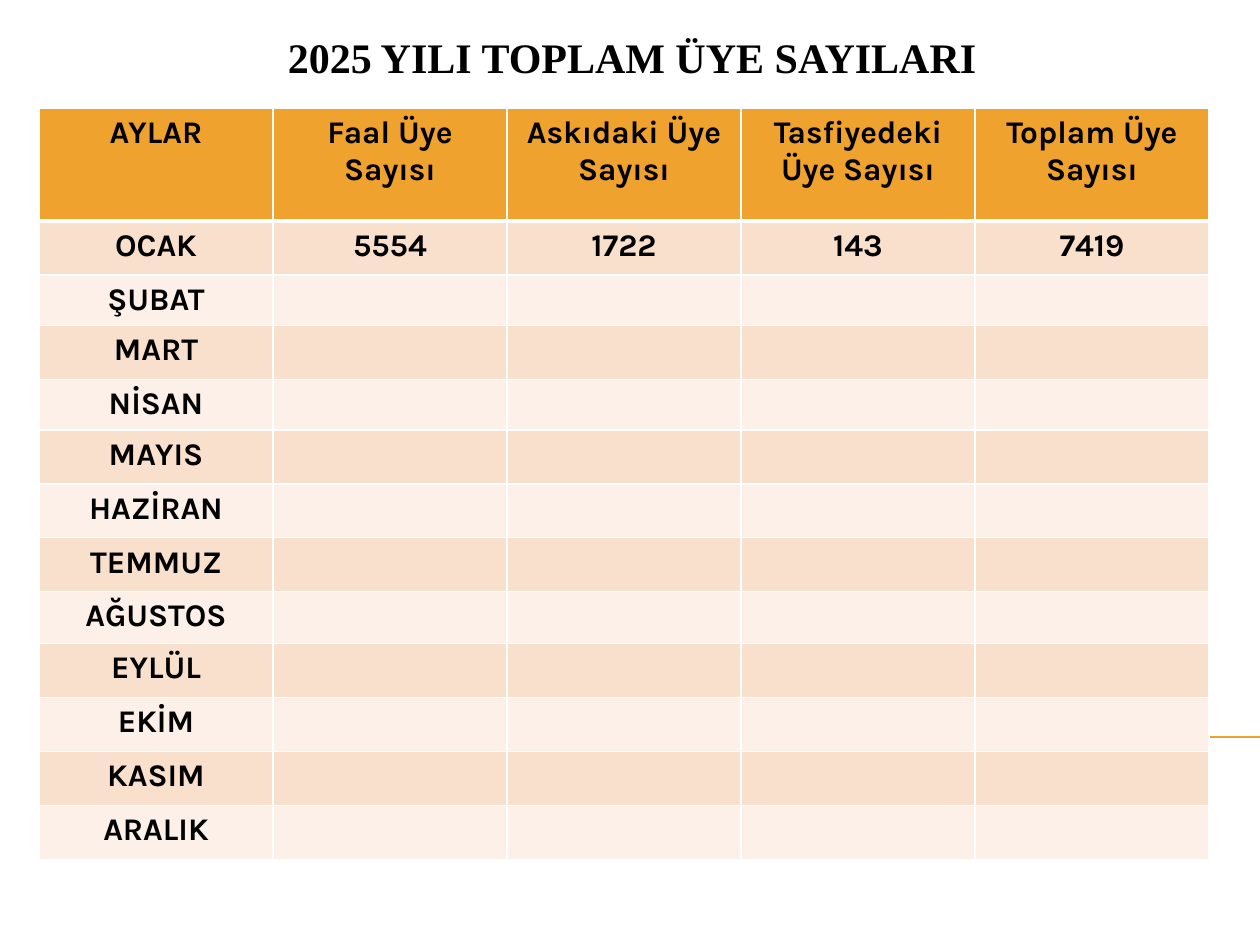
import pptx
import pptx.util
import pptx.dml.color
import pptx.enum.shapes
import pptx.enum.text
import pptx.oxml.ns
import lxml.etree

# Content
TITLE = "2025 YILI TOPLAM ÜYE SAYILARI"
HEADS = ["AYLAR", "Faal Üye Sayısı", "Askıdaki Üye Sayısı",
         "Tasfiyedeki Üye Sayısı", "Toplam Üye Sayısı"]
MONTHS = ["OCAK", "ŞUBAT", "MART", "NİSAN", "MAYIS", "HAZİRAN",
          "TEMMUZ", "AĞUSTOS", "EYLÜL", "EKİM", "KASIM", "ARALIK"]
COUNTS = {"OCAK": ["5554", "1722", "143", "7419"]}

# Layout in px, 126 to the inch
SIZE = (1260, 945)
RULE = (71, 737, 1260, 737)
HEAD_BOX = (49, 29, 1166, 59)
LEFT, TOP, COL = 39, 108, 234
HEAD_ROW, ROW = 113, 54
SHORT = {"ŞUBAT": 49, "MAYIS": 54, "NİSAN": 44, "AĞUSTOS": 52}

# Formats
ORANGE, WHITE = "F0A22E", "FFFFFF"
BANDS = ["F9E0CD", "FCF0E8"]
TITLE_FONT = {"name": "Times New Roman", "size": pptx.util.Pt(24), "bold": True}
CELL_FONT = {"name": "Karla", "size": pptx.util.Pt(18), "bold": True}


def px(n):
    return round(n * 914400 / 126)


def hue(code):
    return pptx.dml.color.RGBColor.from_string(code)


def style(para, look):
    para.alignment = pptx.enum.text.PP_ALIGN.CENTER
    for key, val in look.items():
        setattr(para.font, key, val)
    para.font.color.rgb = hue("000000")


def edge(cell, sides):
    """Draw white cell borders; sides maps a tag to a width in points."""
    props = cell._tc.get_or_add_tcPr()
    for spot, (tag, width) in enumerate(sides.items()):
        line = lxml.etree.Element(pptx.oxml.ns.qn("a:" + tag),
                                  w=str(pptx.util.Pt(width)))
        fill = lxml.etree.SubElement(line, pptx.oxml.ns.qn("a:solidFill"))
        lxml.etree.SubElement(fill, pptx.oxml.ns.qn("a:srgbClr"), val=WHITE)
        props.insert(spot, line)


deck = pptx.Presentation()
deck.slide_width, deck.slide_height = map(px, SIZE)
slide = deck.slides.add_slide(deck.slide_layouts[6])

# Thin rule behind the table
rule = slide.shapes.add_connector(
    pptx.enum.shapes.MSO_CONNECTOR.STRAIGHT, *map(px, RULE))
rule.line.color.rgb = hue(ORANGE)
rule.line.width = pptx.util.Pt(0.75)
lxml.etree.SubElement(rule._element.spPr, pptx.oxml.ns.qn("a:effectLst"))

# Title
frame = slide.shapes.add_textbox(*map(px, HEAD_BOX)).text_frame
frame.word_wrap = True
frame.vertical_anchor = pptx.enum.text.MSO_ANCHOR.BOTTOM
frame.text = TITLE
style(frame.paragraphs[0], TITLE_FONT)

# Member table
blank = [""] * (len(HEADS) - 1)
rows = [HEADS] + [[month] + COUNTS.get(month, blank) for month in MONTHS]
highs = [HEAD_ROW] + [SHORT.get(month, ROW) for month in MONTHS]
table = slide.shapes.add_table(
    len(rows), len(HEADS), px(LEFT), px(TOP),
    px(COL * len(HEADS)), px(sum(highs))).table
for col in table.columns:
    col.width = px(COL)
for r, (row, high) in enumerate(zip(rows, highs)):
    table.rows[r].height = px(high)
    for c, text in enumerate(row):
        cell = table.cell(r, c)
        cell.text = text
        style(cell.text_frame.paragraphs[0], CELL_FONT)
        cell.fill.solid()
        cell.fill.fore_color.rgb = hue(BANDS[(r - 1) % 2] if r else ORANGE)
        edge(cell, {"lnL": 1, "lnR": 1, "lnT": 3 if r == 1 else 1,
                    "lnB": 3 if r == 0 else 1})

deck.save("out.pptx")
